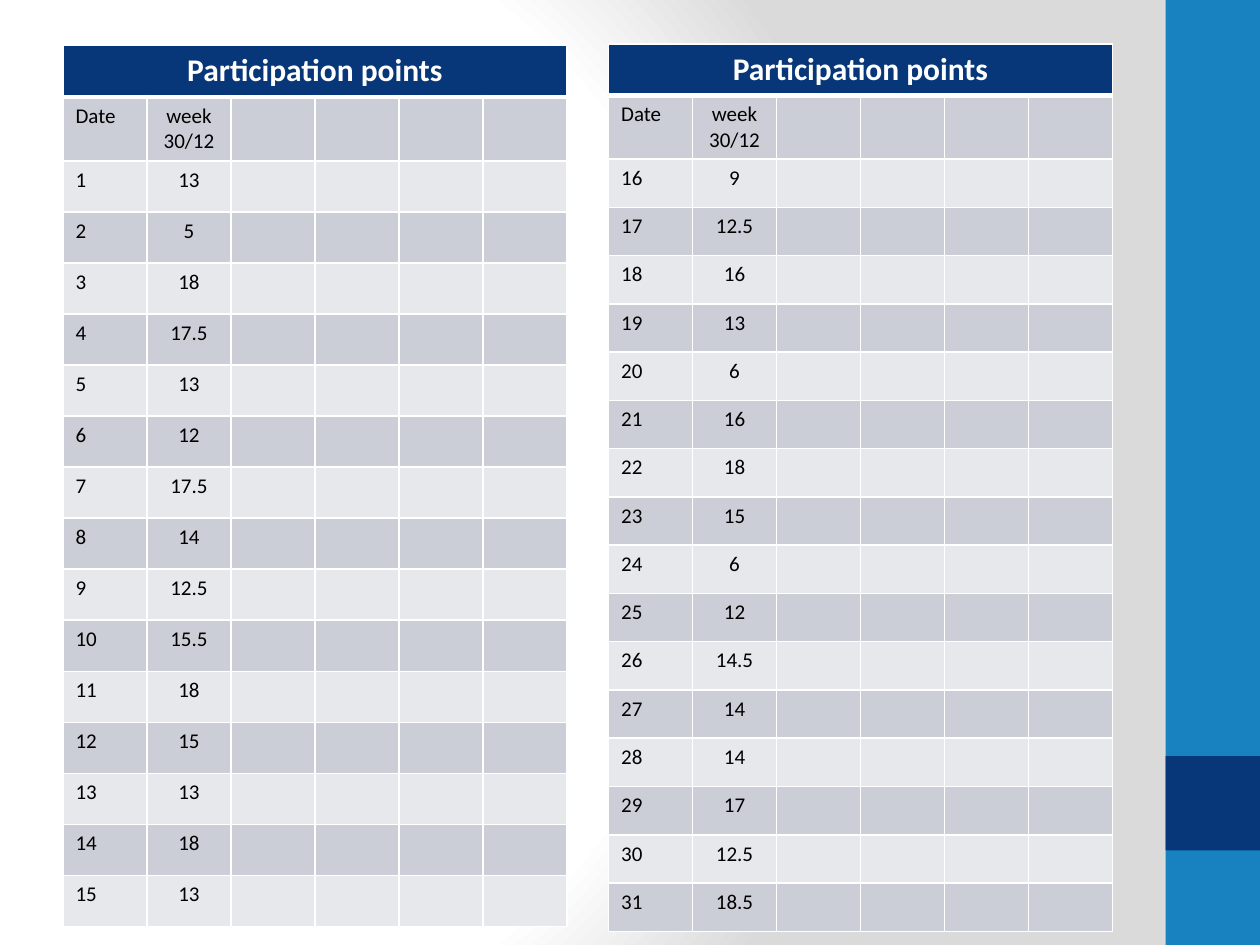
"""Build a slide with two tables of participation points beside a blue side band."""
import lxml.etree
import pptx
import pptx.dml.color
import pptx.enum.shapes
import pptx.enum.text
import pptx.oxml
import pptx.oxml.ns
import pptx.util

WHITE = pptx.dml.color.RGBColor(0xFF, 0xFF, 0xFF)
BLACK = pptx.dml.color.RGBColor(0x00, 0x00, 0x00)
BLUE = pptx.dml.color.RGBColor(0x17, 0x82, 0xBF)
NAVY = pptx.dml.color.RGBColor(0x07, 0x37, 0x79)
DARK_BAND = pptx.dml.color.RGBColor(0xCC, 0xCE, 0xD7)
LIGHT_BAND = pptx.dml.color.RGBColor(0xE7, 0xE8, 0xEC)
BACKDROP_STOPS = ((0, WHITE), (75, WHITE), (100, pptx.dml.color.RGBColor(0xDA, 0xDA, 0xDA)))
LEFT, CENTER = pptx.enum.text.PP_ALIGN.LEFT, pptx.enum.text.PP_ALIGN.CENTER
NAMESPACE = pptx.oxml.ns.nsdecls("a")
COLUMNS = 6
TABLE_WIDTH = 4
DATE_ROW_HEIGHT = 0.5


def write_text(cell, text, size=12, color=BLACK, bold=False, alignment=LEFT):
    paragraph = cell.text_frame.paragraphs[0]
    paragraph.alignment = alignment
    if not text:
        end = lxml.etree.SubElement(paragraph._p, pptx.oxml.ns.qn("a:endParaRPr"))
        end.set("sz", str(size * 100))
        return
    run = paragraph.add_run()
    run.text = text
    run.font.name = "Calibri"
    run.font.size = pptx.util.Pt(size)
    run.font.bold = bold
    run.font.color.rgb = color


def format_cell(cell, fill, top=1, bottom=1):
    cell.fill.solid()
    cell.fill.fore_color.rgb = fill
    properties = cell._tc.get_or_add_tcPr()
    for index, (side, points) in enumerate((("L", 1), ("R", 1), ("T", top), ("B", bottom))):
        properties.insert(index, pptx.oxml.parse_xml(
            f'<a:ln{side} {NAMESPACE} w="{pptx.util.Pt(points)}"><a:solidFill>'
            f'<a:srgbClr val="{WHITE}"/></a:solidFill></a:ln{side}>'))


presentation = pptx.Presentation()
presentation.slide_width = pptx.util.Inches(10)
presentation.slide_height = pptx.util.Inches(7.5)
slide = presentation.slides.add_slide(presentation.slide_layouts[6])

slide.background.fill.solid()
background = slide._element.find(".//" + pptx.oxml.ns.qn("p:bgPr"))
stops = "".join(f'<a:gs pos="{position * 1000}"><a:srgbClr val="{color}"/></a:gs>'
                for position, color in BACKDROP_STOPS)
background.replace(background[0], pptx.oxml.parse_xml(
    f'<a:gradFill {NAMESPACE} rotWithShape="1"><a:gsLst>{stops}</a:gsLst><a:path path="circle">'
    '<a:fillToRect l="20000" t="50000" r="100000" b="50000"/></a:path></a:gradFill>'))

band_width = presentation.slide_width * 0.075
for top_share, height_share, color in ((0, 1, BLUE), (0.8, 0.1, NAVY)):
    band = slide.shapes.add_shape(
        pptx.enum.shapes.MSO_SHAPE.RECTANGLE,
        int(presentation.slide_width - band_width), int(presentation.slide_height * top_share),
        int(band_width), int(presentation.slide_height * height_share))
    band.shadow.inherit = False
    band.fill.solid()
    band.fill.fore_color.rgb = color
    band.line.fill.background()

first_half = "13 5 18 17.5 13 12 17.5 14 12.5 15.5 18 15 13 18 13".split()
second_half = "9 12.5 16 13 6 16 18 15 6 12 14.5 14 14 17 12.5 18.5".split()
tables = (
    (0.5, 0.36, 6.99, 0.41, 1, first_half),
    (4.83, 0.35, 7.03, 0.4, 16, second_half),
)
for left, top, height, title_height, first_number, points in tables:
    rows = [("Date", "week 30/12")]
    rows += [(str(number), point) for number, point in enumerate(points, first_number)]
    frame = slide.shapes.add_table(
        len(rows) + 1, COLUMNS, pptx.util.Inches(left), pptx.util.Inches(top),
        pptx.util.Inches(TABLE_WIDTH), pptx.util.Inches(height))
    table = frame.table
    point_height = (height - title_height - DATE_ROW_HEIGHT) / len(points)
    row_heights = [title_height, DATE_ROW_HEIGHT] + [point_height] * len(points)
    for row, row_height in zip(table.rows, row_heights):
        row.height = pptx.util.Inches(row_height)

    table.cell(0, 0).merge(table.cell(0, COLUMNS - 1))
    write_text(table.cell(0, 0), "Participation points", size=18, color=WHITE,
               bold=True, alignment=CENTER)
    for column in range(COLUMNS):
        format_cell(table.cell(0, column), NAVY, bottom=3)

    for row_number, texts in enumerate(rows, 1):
        fill = DARK_BAND if row_number % 2 else LIGHT_BAND
        for column in range(COLUMNS):
            cell = table.cell(row_number, column)
            text = texts[column] if column < len(texts) else ""
            write_text(cell, text, alignment=CENTER if column == 1 else LEFT)
            format_cell(cell, fill, top=3 if row_number == 1 else 1)

presentation.save("out.pptx")
